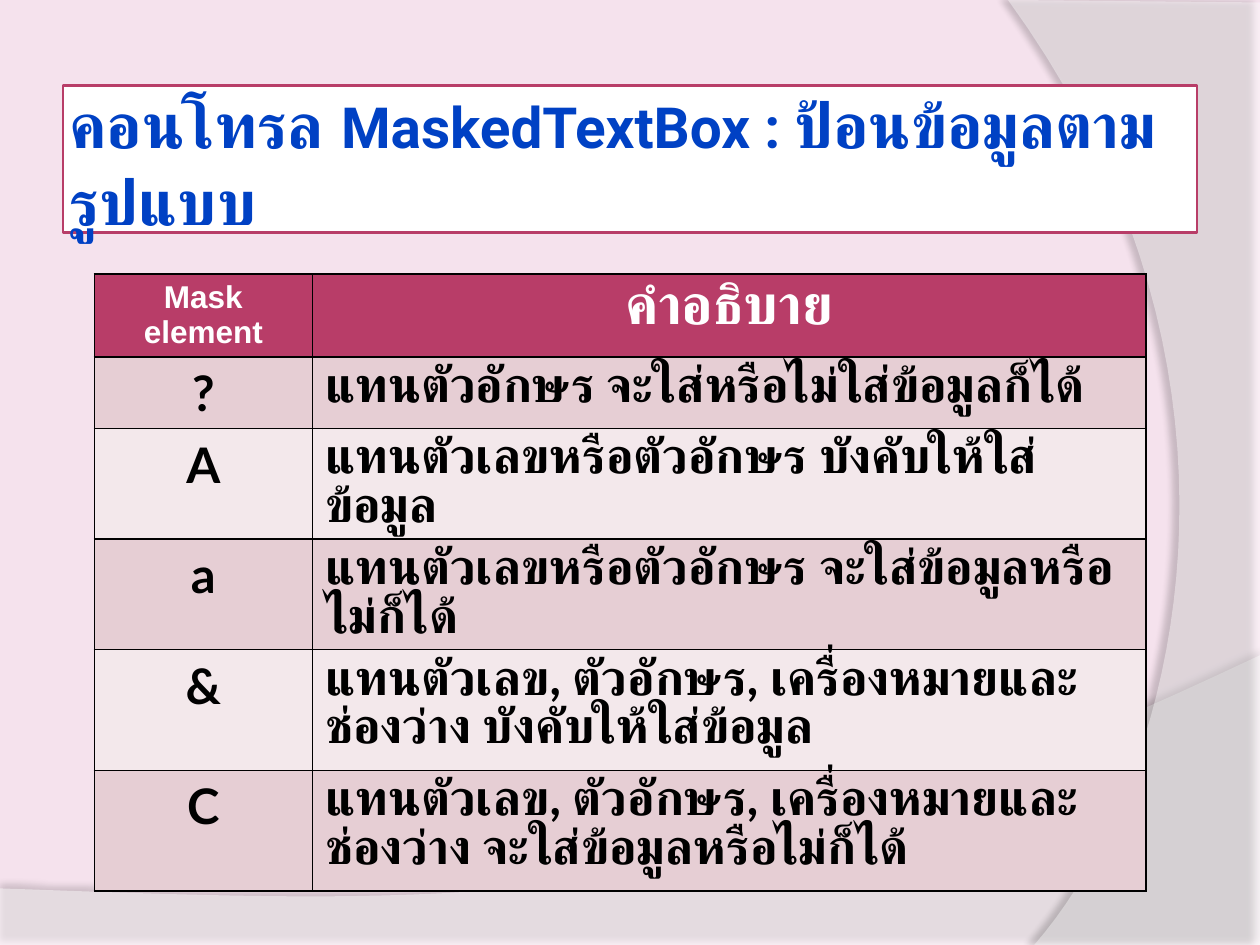
"""Build a slide that explains MaskedTextBox mask elements in a table."""
from lxml import etree
from pptx import Presentation
from pptx import util as u
from pptx.dml.color import RGBColor
from pptx.enum import text
from pptx.oxml import parse_xml
from pptx.oxml.ns import nsdecls, qn

PINK = RGBColor(0xF5, 0xE2, 0xED)
WHITE = RGBColor(0xFF, 0xFF, 0xFF)
BLACK = RGBColor(0, 0, 0)
BLUE = RGBColor(0x00, 0x41, 0xC4)
CRIMSON = RGBColor(0xB8, 0x3D, 0x68)
ROSE = RGBColor(0xE6, 0xCE, 0xD4)
PALE = RGBColor(0xF3, 0xE8, 0xEB)


def add_span(para, words, **format_values):
    span = para.add_run()
    span.text = words
    color = format_values.pop("color")
    for name, value in format_values.items():
        setattr(span.font, name, value)
    span.font.color.rgb = color
    complex_script = etree.SubElement(span.font._element, qn("a:cs"))
    complex_script.set("typeface", format_values["name"])


def curve(*controls, steps=40):
    points = []
    for step in range(steps + 1):
        t = step / steps
        weights = ((1 - t) ** 3, 3 * t * (1 - t) ** 2, 3 * t * t * (1 - t), t ** 3)
        points.append(tuple(sum(w * c[axis] for w, c in zip(weights, controls)) for axis in (0, 1)))
    return points


deck = Presentation()
deck.slide_width, deck.slide_height = u.Cm(25.4), u.Cm(19.05)
page = deck.slides.add_slide(deck.slide_layouts[5])
page.background.fill.solid()
page.background.fill.fore_color.rgb = PINK
title = page.shapes.title

bottom_wave = [(0, 19.08), (25.4, 19.08)]
bottom_wave += curve((25.4, 13.21), (14.2, 18.52), (9.93, 18.26), (0, 17.91))
right_wave = [(25.4, 0.05), (25.4, 19.05)]
right_wave += curve((20.85, 19.05), (23.75, 15.72), (25.86, 7.62), (20.32, 0))
waves = [
    (bottom_wave, 45, 35, 3.5, 270),
    (right_wave, 40, 45, 4, 180),
]
for points, opacity, shade, distance, angle in waves:
    outline = [(u.Cm(x), u.Cm(y)) for x, y in points]
    builder = page.shapes.build_freeform(*outline[0])
    builder.add_line_segments(outline[1:])
    wave = builder.convert_to_shape()
    wave.line.fill.background()
    wave.fill.solid()
    wave.fill.fore_color.rgb = WHITE
    alpha = etree.SubElement(wave._element.spPr.find(f".//{qn('a:srgbClr')}"), qn("a:alpha"))
    alpha.set("val", str(opacity * 1000))
    wave._element.spPr.append(parse_xml(
        f'<a:effectLst {nsdecls("a")}><a:outerShdw blurRad="{u.Pt(4)}" dist="{u.Pt(distance)}" '
        f'dir="{angle * 60000}" rotWithShape="0"><a:srgbClr val="000000">'
        f'<a:alpha val="{shade * 1000}"/></a:srgbClr></a:outerShdw></a:effectLst>'))
    title._element.addprevious(wave._element)

place = {"left": 1.27, "top": 1.72, "width": 22.86, "height": 2.97}
for name, value in place.items():
    setattr(title, name, u.Cm(value))
title.fill.solid()
title.fill.fore_color.rgb = WHITE
title.line.color.rgb = CRIMSON
title.line.width = u.Pt(1.5)
frame = title.text_frame
frame_values = {"word_wrap": True, "auto_size": text.MSO_AUTO_SIZE.NONE,
                "vertical_anchor": text.MSO_ANCHOR.MIDDLE}
frame_values.update({f"margin_{side}": u.Cm(0.13) for side in ("left", "right", "top", "bottom")})
for name, value in frame_values.items():
    setattr(frame, name, value)
para = frame.paragraphs[0]
para.alignment = text.PP_ALIGN.LEFT
title_spans = [("คอนโทรล", 36), (" ", 39.6), ("MaskedTextBox : ", 32.4), ("ป้อนข้อมูลตามรูปแบบ", 36)]
for words, size in title_spans:
    add_span(para, words, size=u.Pt(size), bold=True, name="Roboto", color=BLUE)

rows = [
    ("Mask element", "คำอธิบาย", 1.67, 0),
    ("?", "แทนตัวอักษร จะใส่หรือไม่ใส่ข้อมูลก็ได้", 1.43, 0),
    ("A", "แทนตัวเลขหรือตัวอักษร บังคับให้ใส่ข้อมูล", 2.23, 0),
    ("a", "แทนตัวเลขหรือตัวอักษร จะใส่ข้อมูลหรือไม่ก็ได้", 2.23, 0),
    ("&", "แทนตัวเลข, ตัวอักษร, เครื่องหมายและช่องว่าง บังคับให้ใส่ข้อมูล", 2.43, 5),
    ("C", "แทนตัวเลข, ตัวอักษร, เครื่องหมายและช่องว่าง จะใส่ข้อมูลหรือไม่ก็ได้", 2.43, 5),
]
widths = (4.4, 16.8)
table = page.shapes.add_table(len(rows), len(widths), u.Cm(1.9), u.Cm(5.52), u.Cm(sum(widths)),
                              u.Cm(sum(row[2] for row in rows))).table
for column, width in zip(table.columns, widths):
    column.width = u.Cm(width)

for row_index, (*words_in_row, height, space) in enumerate(rows):
    table.rows[row_index].height = u.Cm(height)
    is_header = row_index == 0
    for column_index, words in enumerate(words_in_row):
        cell = table.cell(row_index, column_index)
        cell.fill.solid()
        cell.fill.fore_color.rgb = CRIMSON if is_header else ROSE if row_index % 2 else PALE
        para = cell.text_frame.paragraphs[0]
        is_description = column_index == 1 and not is_header
        para.alignment = text.PP_ALIGN.LEFT if is_description else text.PP_ALIGN.CENTER
        if column_index == 1:
            para.line_spacing = 0.83
            para.space_before = u.Pt(space)
        size, font = 28, "Lato"
        if is_header:
            size, font = ((18, "Arial"), (32, "Lato"))[column_index]
        add_span(para, words, size=u.Pt(size), bold=True, name=font,
                 color=WHITE if is_header else BLACK)
        properties = cell._tc.get_or_add_tcPr()
        for position, edge in enumerate(("lnL", "lnR", "lnT", "lnB")):
            properties.insert(position, parse_xml(
                f'<a:{edge} {nsdecls("a")} w="{u.Pt(1)}"><a:solidFill>'
                f'<a:srgbClr val="{BLACK}"/></a:solidFill></a:{edge}>'))

deck.save("out.pptx")
